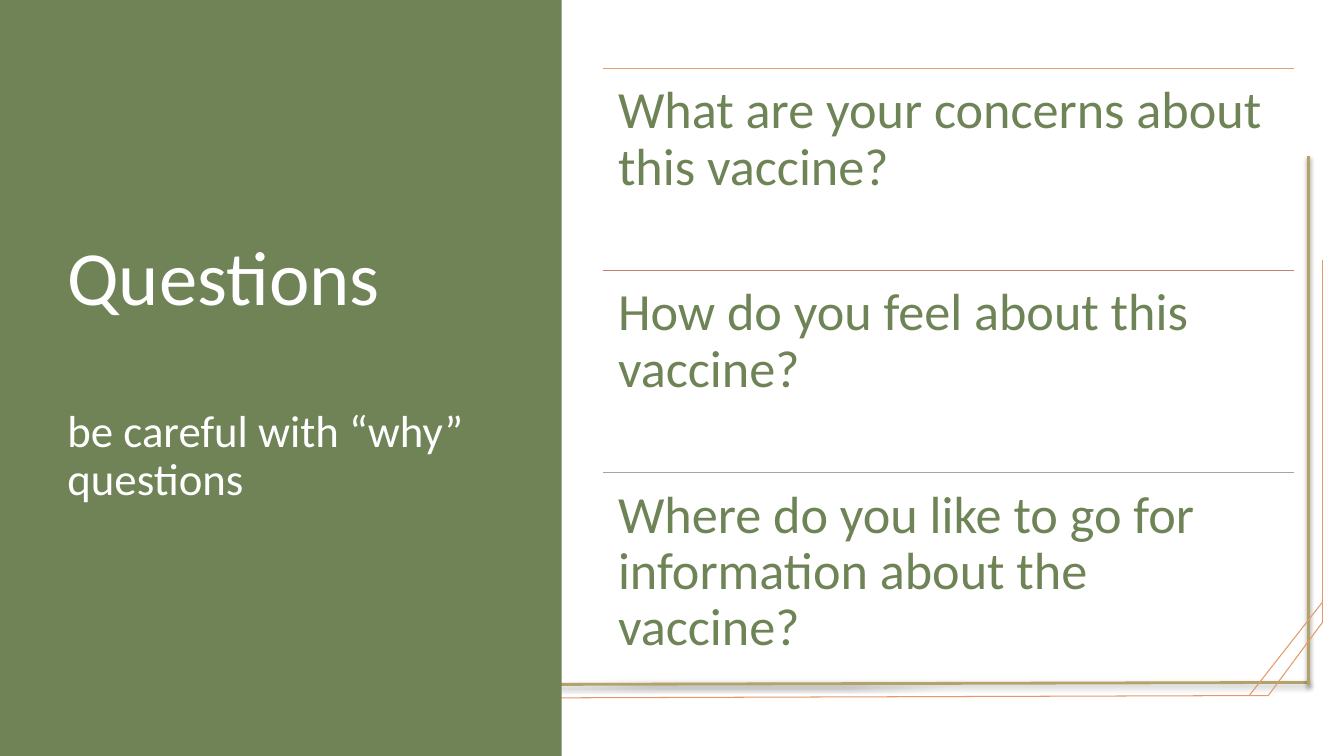
from dataclasses import dataclass
from typing import NamedTuple

from lxml.etree import SubElement
from pptx import Presentation
from pptx.dml.color import RGBColor as RGB
from pptx.enum.shapes import MSO_CONNECTOR as CONN, MSO_SHAPE as SHAPE
from pptx.enum.text import MSO_ANCHOR as ANCHOR, PP_ALIGN as ALIGN
from pptx.oxml.ns import qn
from pptx.util import Emu, Inches, Pt


@dataclass(frozen=True)
class Theme:
    font: str = "Calibri"
    panel: str = "6F8356"
    panel_text: str = "FFFFFF"
    question: str = "6F8456"
    gold: str = "B3A369"
    orange: str = "E39A68"
    shadow: str = "000000"
    dividers: tuple[str, ...] = ("E59E6D", "C47F6E", "A4A4A4")
    title_pt: float = 54.7
    note_pt: float = 32
    question_pt: float = 37.3
    title_gap_pt: float = 62
    line_spacing: float = 0.9


class Rule(NamedTuple):
    """A line between two points, in percent of the slide's width and height."""
    x1: float
    y1: float
    x2: float
    y2: float
    color: str
    weight: float
    shadow: bool = False


class Box(NamedTuple):
    """An area in percent of the slide's width and height."""
    x: float
    y: float
    w: float
    h: float


class Para(NamedTuple):
    text: str
    size: float
    color: str
    space_before: float = 0


THEME = Theme()
WIDTH, HEIGHT = Inches(13.33), Inches(7.5)

# Frame lines along the right and bottom edges
GOLD_X, GOLD_Y = 97.37, 90.67
EDGE_X, EDGE_Y = 98.42, 92
CORNER_X, CORNER_Y = 94.37, 82.27
FRAME = [
    Rule(12.45, GOLD_Y, GOLD_X, 90.27, THEME.gold, 2, True),
    Rule(GOLD_X, 20.67, GOLD_X, GOLD_Y, THEME.gold, 2, True),
    Rule(EDGE_X, CORNER_Y, CORNER_X, EDGE_Y, THEME.orange, 0.75),
    Rule(EDGE_X, 79.6, 92.95, EDGE_Y, THEME.orange, 0.75),
    Rule(CORNER_X, EDGE_Y, 25.73, 92.4, THEME.orange, 0.75),
    Rule(EDGE_X, CORNER_Y, EDGE_X, 34.4, THEME.orange, 0.75),
]

# Left panel and the list of questions
PANEL = Box(0, 0, 41.79, 100)
TITLE = Box(4.28, 9.07, 31.21, 80.27)
LIST = Box(44.86, 9.07, 51.39, 80.2)
QUESTIONS = [
    "What are your concerns about this vaccine?",
    "How do you feel about this vaccine?",
    "Where do you like to go for information about the vaccine?",
]


def px(share: float) -> Emu:
    return Emu(round(WIDTH * share / 100))


def py(share: float) -> Emu:
    return Emu(round(HEIGHT * share / 100))


def place(box: Box) -> tuple[Emu, Emu, Emu, Emu]:
    return px(box.x), py(box.y), px(box.w), py(box.h)


def draw_rule(shapes, rule: Rule) -> None:
    sp = shapes.add_connector(CONN.STRAIGHT, px(rule.x1), py(rule.y1),
                              px(rule.x2), py(rule.y2))
    sp.line.color.rgb = RGB.from_string(rule.color)
    sp.line.width = Pt(rule.weight)
    effects = SubElement(sp._element.spPr, qn("a:effectLst"))
    if rule.shadow:
        outer = SubElement(effects, qn("a:outerShdw"), blurRad=str(Pt(3.1)),
                           dist=str(Pt(1.6)), dir=str(90 * 60000),
                           rotWithShape="0")
        color = SubElement(outer, qn("a:srgbClr"), val=THEME.shadow)
        SubElement(color, qn("a:alpha"), val="38000")


def draw_panel(shapes, box: Box) -> None:
    sp = shapes.add_shape(SHAPE.RECTANGLE, *place(box))
    sp.shadow.inherit = False
    sp.fill.solid()
    sp.fill.fore_color.rgb = RGB.from_string(THEME.panel)
    sp.line.fill.background()


def draw_text(shapes, box: Box, paras: list[Para], anchor: ANCHOR,
              inset_x: float, inset_y: float) -> None:
    tf = shapes.add_textbox(*place(box)).text_frame
    tf.word_wrap = True
    tf.vertical_anchor = anchor
    tf.margin_left = tf.margin_right = Inches(inset_x)
    tf.margin_top = tf.margin_bottom = Inches(inset_y)
    tf.text = "\n".join(para.text for para in paras)
    for p, para in zip(tf.paragraphs, paras):
        p.alignment = ALIGN.LEFT
        p.line_spacing = THEME.line_spacing
        p.space_before = Pt(para.space_before)
        for r in p.runs:
            r.font.name = THEME.font
            r.font.size = Pt(para.size)
            r.font.color.rgb = RGB.from_string(para.color)


def main() -> None:
    prs = Presentation()
    prs.slide_width, prs.slide_height = WIDTH, HEIGHT
    shapes = prs.slides.add_slide(prs.slide_layouts[6]).shapes

    # Frame
    for rule in FRAME:
        draw_rule(shapes, rule)

    # Panel with title and note
    draw_panel(shapes, PANEL)
    draw_text(shapes, TITLE, [
        Para("Questions", THEME.title_pt, THEME.panel_text),
        Para("be careful with “why” questions", THEME.note_pt,
             THEME.panel_text, THEME.title_gap_pt),
    ], ANCHOR.MIDDLE, 0.1, 0.05)

    # Questions, each below its divider
    row = LIST.h / len(QUESTIONS)
    for i, (question, color) in enumerate(zip(QUESTIONS, THEME.dividers)):
        y = LIST.y + i * row
        draw_rule(shapes, Rule(LIST.x, y, LIST.x + LIST.w, y, color, 1))
        draw_text(shapes, Box(LIST.x, y, LIST.w, row),
                  [Para(question, THEME.question_pt, THEME.question)],
                  ANCHOR.TOP, 0.15, 0.15)

    prs.save("out.pptx")


if __name__ == "__main__":
    main()
